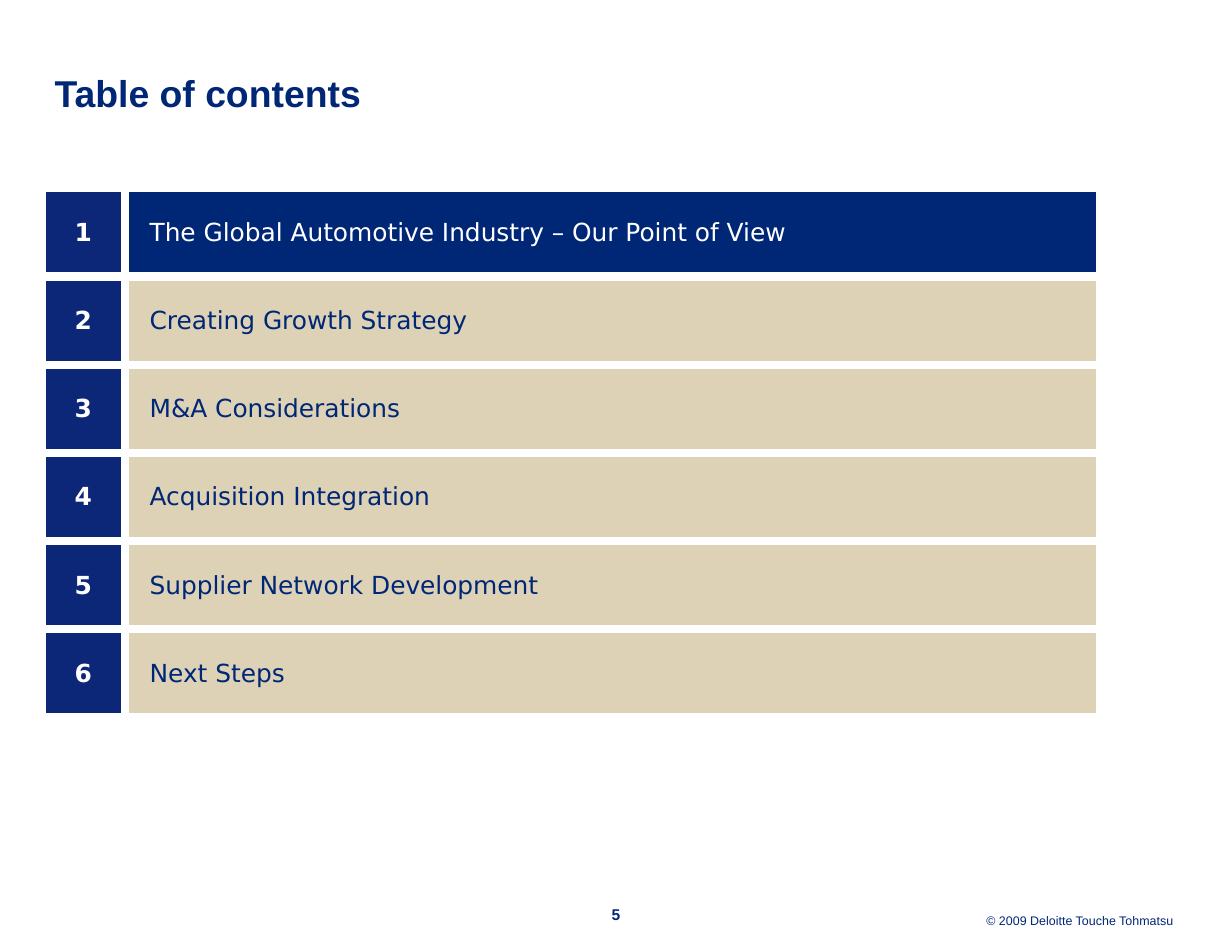
from lxml import etree
from pptx import Presentation
from pptx import util as u
from pptx.dml.color import RGBColor
from pptx.enum import text
from pptx.oxml.ns import qn

NAVY, NUMBER_BLUE, SAND, WHITE = "002776", "0C2678", "DDD2B5", "FFFFFF"
TOPICS = [
    "The Global Automotive Industry – Our Point of View",
    "Creating Growth Strategy",
    "M&A Considerations",
    "Acquisition Integration",
    "Supplier Network Development",
    "Next Steps",
]
CURRENT_TOPIC = 1
ROW_HEIGHT = u.Cm(2)
COLUMN_WIDTHS = [u.Cm(1.9), u.Cm(22.12)]


def color(hex_string):
    return RGBColor.from_string(hex_string)


def add_run(paragraph, wording, size, font_name, hex_string, bold=False):
    run = paragraph.add_run()
    run.text = wording
    run.font.size = u.Pt(size)
    run.font.name = font_name
    run.font.bold = bold
    run.font.color.rgb = color(hex_string)


def add_label(slide, box, wording, size, align, line_spacing, bold=False,
              anchor=text.MSO_ANCHOR.TOP):
    """Add a one-line text box without margins; box is in centimetres."""
    frame = slide.shapes.add_textbox(*map(u.Cm, box)).text_frame
    frame.word_wrap = True
    frame.margin_left = frame.margin_right = 0
    frame.margin_top = frame.margin_bottom = 0
    frame.vertical_anchor = anchor
    paragraph = frame.paragraphs[0]
    paragraph.alignment = align
    paragraph.line_spacing = line_spacing
    add_run(paragraph, wording, size, "Arial", NAVY, bold)


def set_borders(cell, hex_string, width):
    properties = cell._tc.get_or_add_tcPr()
    for side in ("a:lnL", "a:lnR", "a:lnT", "a:lnB"):
        line = etree.SubElement(properties, qn(side), w=str(u.Pt(width)))
        fill = etree.SubElement(line, qn("a:solidFill"))
        etree.SubElement(fill, qn("a:srgbClr"), val=hex_string)


def fill_cell(cell, wording, background, foreground, align, bold=False, indent=0):
    set_borders(cell, WHITE, 6)
    cell.fill.solid()
    cell.fill.fore_color.rgb = color(background)
    cell.vertical_anchor = text.MSO_ANCHOR.MIDDLE
    paragraph = cell.text_frame.paragraphs[0]
    paragraph.alignment = align
    paragraph.line_spacing = 1.02
    properties = paragraph._p.get_or_add_pPr()
    properties.set("marL", str(u.Cm(indent)))
    space_after = etree.SubElement(properties, qn("a:spcAft"))
    etree.SubElement(space_after, qn("a:spcPct"), val="37000")
    add_run(paragraph, wording, 16, "DejaVu Sans", foreground, bold)


def add_contents_table(slide):
    table = slide.shapes.add_table(
        len(TOPICS), 2, u.Cm(0.94), u.Cm(4.27),
        sum(COLUMN_WIDTHS), ROW_HEIGHT * len(TOPICS)).table
    table.first_row = table.horz_banding = False
    for column, width in zip(table.columns, COLUMN_WIDTHS):
        column.width = width
    for number, topic in enumerate(TOPICS, start=1):
        table.rows[number - 1].height = ROW_HEIGHT
        background, foreground = (
            (NAVY, WHITE) if number == CURRENT_TOPIC else (SAND, NAVY))
        fill_cell(table.cell(number - 1, 0), str(number), NUMBER_BLUE, WHITE,
                  text.PP_ALIGN.CENTER, bold=True)
        fill_cell(table.cell(number - 1, 1), topic, background, foreground,
                  text.PP_ALIGN.LEFT, indent=0.3)


def main():
    presentation = Presentation()
    presentation.slide_width = u.Cm(27.94)
    presentation.slide_height = u.Cm(21.59)
    slide = presentation.slides.add_slide(presentation.slide_layouts[6])
    add_label(slide, (19.56, 20.62, 7.06, 0.46), "© 2009 Deloitte Touche Tohmatsu",
              8, text.PP_ALIGN.RIGHT, u.Pt(12))
    add_label(slide, (1.24, 1.09, 25.73, 1.98), "Table of contents", 24,
              text.PP_ALIGN.LEFT, 1.05, bold=True, anchor=text.MSO_ANCHOR.MIDDLE)
    add_label(slide, (13.54, 20.52, 0.86, 0.46), "5", 10,
              text.PP_ALIGN.CENTER, u.Pt(12), bold=True)
    add_contents_table(slide)
    presentation.save("out.pptx")


if __name__ == "__main__":
    main()
